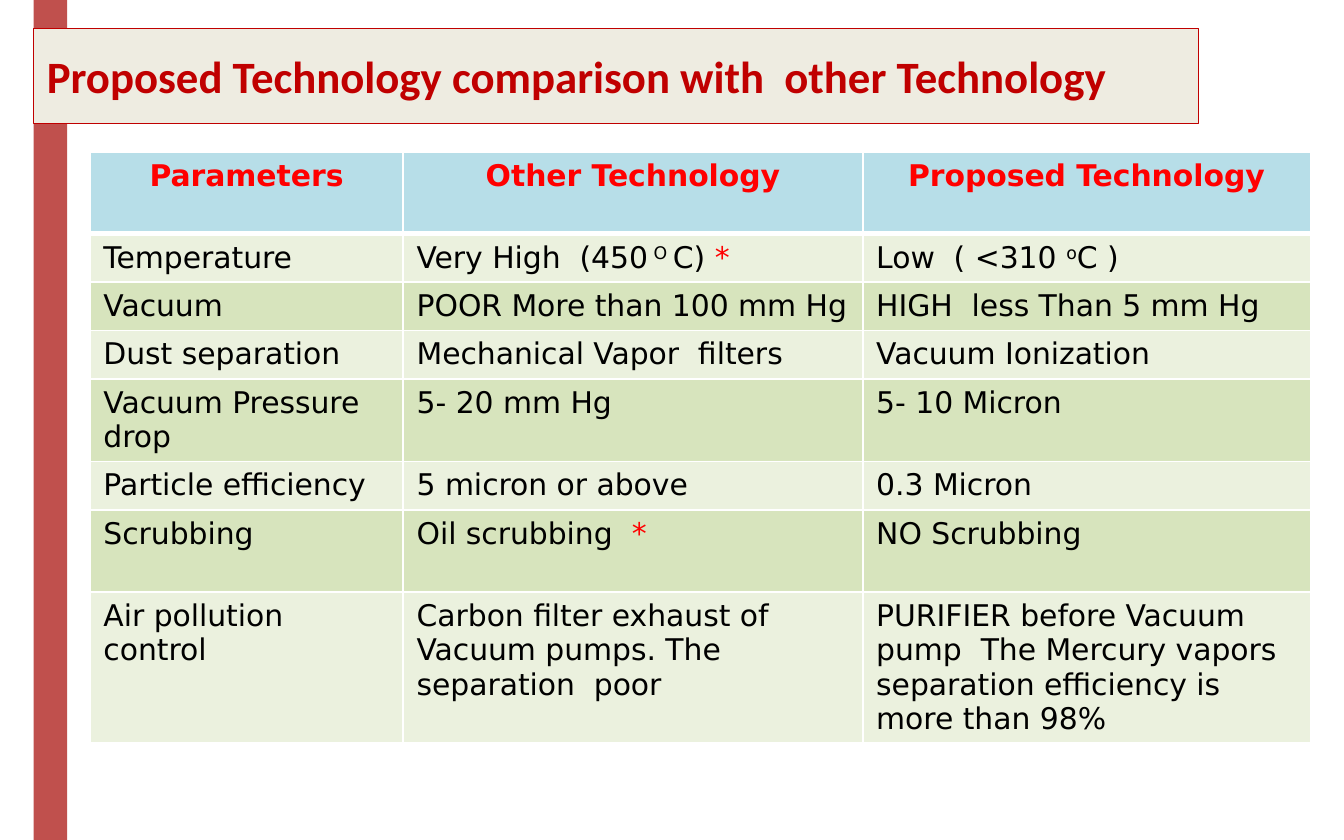
from lxml import etree
from pptx import Presentation
from pptx.dml.color import RGBColor
from pptx.enum.shapes import MSO_SHAPE
from pptx.enum.text import MSO_ANCHOR, PP_ALIGN
from pptx.oxml.ns import qn
from pptx.util import Inches, Pt

RECT, SNIP = MSO_SHAPE.RECTANGLE, MSO_SHAPE.SNIP_ROUND_RECTANGLE
LEFT, CENTER = PP_ALIGN.LEFT, PP_ALIGN.CENTER
MIDDLE = MSO_ANCHOR.MIDDLE
BLACK = RGBColor(0x00, 0x00, 0x00)
RED = RGBColor(0xFF, 0x00, 0x00)
DARK = RGBColor(0xC0, 0x00, 0x00)
BRICK = RGBColor(0xC0, 0x50, 0x4D)
CREAM = RGBColor(0xEE, 0xEC, 0xE1)
BLUE = RGBColor(0xB7, 0xDE, 0xE8)
PALE = RGBColor(0xEB, 0xF1, 0xDE)
GREEN = RGBColor(0xD7, 0xE4, 0xBD)

COLS = [2.33, 3.42, 3.33]
HEIGHTS = [0.61, 0.36, 0.36, 0.36, 0.61, 0.36, 0.61, 1.12]
STAR = ("*", RED)
ROWS = [
    ["Parameters", "Other Technology", "Proposed Technology"],
    ["Temperature",
     ["Very High  (450", (" O ", BLACK, 30), "C) ", STAR],
     ["Low  ( <310 ", ("o", BLACK, 30), "C )"]],
    ["Vacuum", "POOR More than 100 mm Hg", "HIGH  less Than 5 mm Hg"],
    ["Dust separation", "Mechanical Vapor  filters", "Vacuum Ionization"],
    ["Vacuum Pressure drop", "5- 20 mm Hg", "5- 10 Micron"],
    ["Particle efficiency", "5 micron or above", "0.3 Micron"],
    ["Scrubbing", ["Oil scrubbing  ", STAR], "NO Scrubbing"],
    ["Air pollution control",
     "Carbon filter exhaust of Vacuum pumps. The separation  poor",
     "PURIFIER before Vacuum pump  The Mercury vapors separation "
     "efficiency is more than 98%"],
]


class Deck:
    """Holds the text style and the current slide, and draws its elements."""

    def __init__(self, slide, font="DejaVu Sans", size=16):
        self.slide, self.font, self.size = slide, font, size

    def run(self, para, text, color=BLACK, base=0, bold=False, font=None, size=None):
        run = para.add_run()
        run.text = text
        run.font.name = font or self.font
        run.font.size = Pt(size or self.size)
        run.font.bold = bold
        run.font.color.rgb = color
        if base:
            run.font._element.set("baseline", str(base * 1000))

    def box(self, kind, left, top, width, height, fill, line=None):
        shape = self.slide.shapes.add_shape(
            kind, Inches(left), Inches(top), Inches(width), Inches(height))
        shape.shadow.inherit = False
        shape.fill.solid()
        shape.fill.fore_color.rgb = fill
        if line:
            shape.line.color.rgb = line
            shape.line.width = Pt(0.75)
        else:
            shape.line.fill.background()
        return shape

    def title(self, text, *place):
        shape = self.box(SNIP, *place, CREAM, DARK)
        shape.adjustments[0] = shape.adjustments[1] = 0
        frame = shape.text_frame
        frame.word_wrap = True
        frame.vertical_anchor = MIDDLE
        para = frame.paragraphs[0]
        para.alignment = LEFT
        self.run(para, text, DARK, bold=True, font="Calibri", size=24)

    def edges(self, cell, head):
        props = cell._tc.get_or_add_tcPr()
        for spot, side in enumerate("LRTB"):
            width = Pt(3 if head and side == "B" else 1)
            line = etree.Element(qn("a:ln" + side), w=str(width))
            fill = etree.SubElement(line, qn("a:solidFill"))
            etree.SubElement(fill, qn("a:srgbClr"), val="FFFFFF")
            props.insert(spot, line)

    def cell(self, cell, runs, fill, head):
        cell.fill.solid()
        cell.fill.fore_color.rgb = fill
        self.edges(cell, head)
        para = cell.text_frame.paragraphs[0]
        para.alignment = CENTER if head else LEFT
        for part in [runs] if isinstance(runs, str) else runs:
            args = (part,) if isinstance(part, str) else part
            if head:
                self.run(para, *args, color=RED, bold=True)
            else:
                self.run(para, *args)

    def table(self, left, top, cols, heights, rows):
        grid = self.slide.shapes.add_table(
            len(rows), len(cols), Inches(left), Inches(top),
            Inches(sum(cols)), Inches(sum(heights))).table
        for col, width in zip(grid.columns, cols):
            col.width = Inches(width)
        for y, (height, row) in enumerate(zip(heights, rows)):
            grid.rows[y].height = Inches(height)
            fill = (PALE if y % 2 else GREEN) if y else BLUE
            for x, runs in enumerate(row):
                self.cell(grid.cell(y, x), runs, fill, y == 0)


def main():
    show = Presentation()
    show.slide_width, show.slide_height = Inches(10), Inches(6.25)
    deck = Deck(show.slides.add_slide(show.slide_layouts[6]))
    deck.box(RECT, 0.25, 0, 0.25, 6.25, BRICK)
    deck.table(0.67, 1.13, COLS, HEIGHTS, ROWS)
    deck.title("Proposed Technology comparison with  other Technology",
               0.25, 0.21, 8.67, 0.71)
    show.save("out.pptx")


if __name__ == "__main__":
    main()
